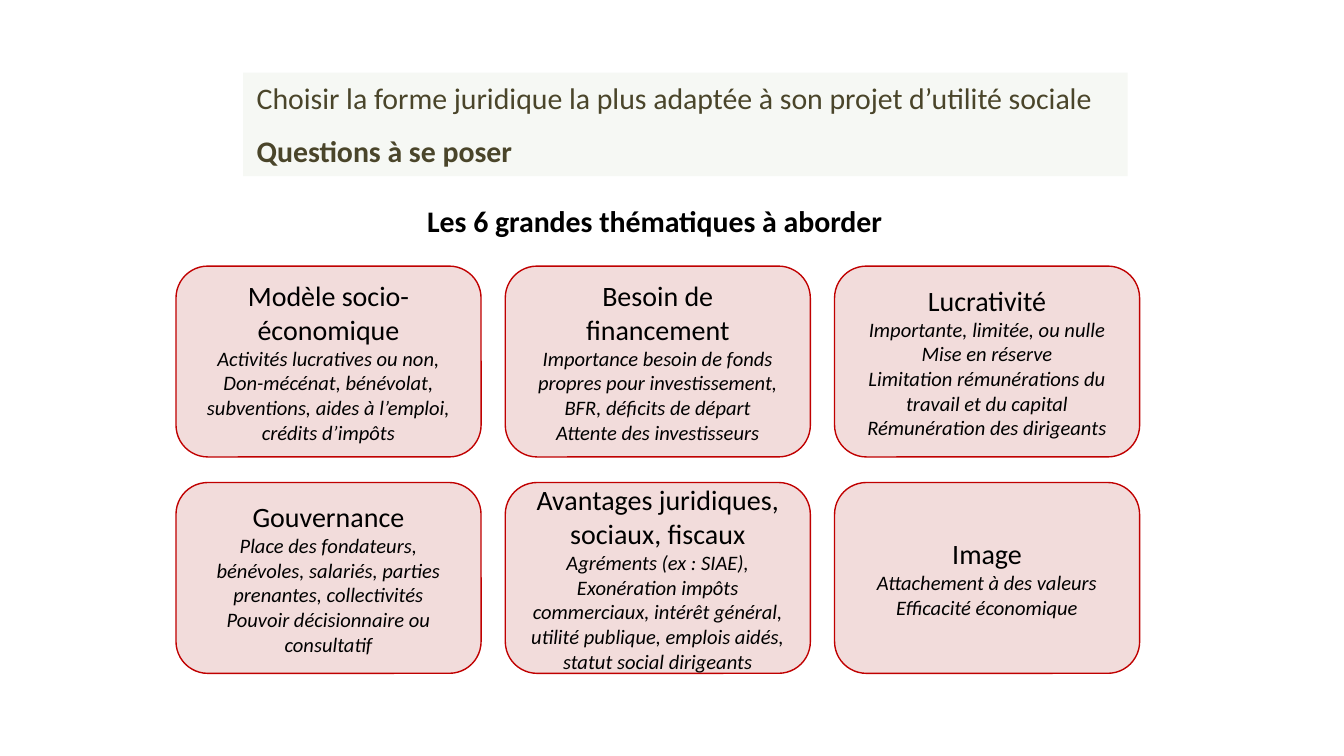
from pptx import Presentation
from pptx import util as u
from pptx.dml.color import RGBColor
from pptx.enum import shapes, text

TITLE_ONLY = 5
FONT = "Calibri"
LEFT, TOP = 1.31, 1.98
CARD_WIDTH, CARD_HEIGHT = 2.27, 1.42
COLUMN_STEP, ROW_STEP = 2.45, 1.61

THEMES = [
    [
        ("Modèle socio-économique",
         ["Activités lucratives ou non, Don-mécénat, bénévolat, subventions, "
          "aides à l’emploi, crédits d’impôts"]),
        ("Besoin de financement",
         ["Importance besoin de fonds propres pour investissement, BFR, "
          "déficits de départ",
          "Attente des investisseurs"]),
        ("Lucrativité",
         ["Importante, limitée, ou nulle",
          "Mise en réserve",
          "Limitation rémunérations du travail et du capital",
          "Rémunération des dirigeants"]),
    ],
    [
        ("Gouvernance",
         ["Place des fondateurs, bénévoles, salariés, parties prenantes, "
          "collectivités",
          "Pouvoir décisionnaire ou consultatif"]),
        ("Avantages juridiques, sociaux, fiscaux",
         ["Agréments (ex : SIAE), Exonération impôts commerciaux, intérêt "
          "général, utilité publique, emplois aidés, statut social dirigeants"]),
        ("Image",
         ["Attachement à des valeurs Efficacité économique"]),
    ],
]


def color(value):
    return RGBColor.from_string(value)


def write(frame, content, first=False, size=16, ink="000000", bold=False,
          italic=False, align=text.PP_ALIGN.LEFT, spacing=None):
    """Write one paragraph, in the frame's opening paragraph if first is set."""
    paragraph = frame.paragraphs[0] if first else frame.add_paragraph()
    paragraph.alignment = align
    paragraph.line_spacing = spacing
    run = paragraph.add_run()
    run.text = content
    run.font.name = FONT
    run.font.size = u.Pt(size)
    run.font.bold = bold
    run.font.italic = italic
    run.font.color.rgb = color(ink)


class ThemeSlide:
    """Style and current slide."""

    header_fill, header_ink = "F6F8F4", "4A452A"
    card_fill, card_line = "F2DCDB", "C00000"

    def __init__(self, presentation):
        layout = presentation.slide_layouts[TITLE_ONLY]
        self.slide = presentation.slides.add_slide(layout)

    def header(self, topic, subtitle):
        title = self.slide.shapes.title
        title.left, title.top = u.Inches(1.81), u.Inches(0.54)
        title.width, title.height = u.Inches(6.58), u.Inches(0.77)
        title.fill.solid()
        title.fill.fore_color.rgb = color(self.header_fill)
        frame = title.text_frame
        frame.auto_size = text.MSO_AUTO_SIZE.NONE
        frame.vertical_anchor = text.MSO_ANCHOR.TOP
        write(frame, topic, first=True, ink=self.header_ink)
        write(frame, subtitle, ink=self.header_ink, bold=True, spacing=1.5)

    def heading(self, content):
        box = self.slide.shapes.add_textbox(
            u.Inches(3.08), u.Inches(1.46), u.Inches(3.63), u.Inches(0.37))
        box.text_frame.word_wrap = True
        write(box.text_frame, content, first=True, bold=True)

    def card(self, column, row, name, details):
        shape = self.slide.shapes.add_shape(
            shapes.MSO_SHAPE.ROUNDED_RECTANGLE,
            u.Inches(LEFT + column * COLUMN_STEP),
            u.Inches(TOP + row * ROW_STEP),
            u.Inches(CARD_WIDTH), u.Inches(CARD_HEIGHT))
        shape.shadow.inherit = False
        shape.fill.solid()
        shape.fill.fore_color.rgb = color(self.card_fill)
        shape.line.color.rgb = color(self.card_line)
        shape.line.width = u.Pt(0.75)
        frame = shape.text_frame
        frame.word_wrap = True
        frame.vertical_anchor = text.MSO_ANCHOR.MIDDLE
        write(frame, name, first=True, size=15, align=text.PP_ALIGN.CENTER)
        for detail in details:
            write(frame, detail, size=11, italic=True,
                  align=text.PP_ALIGN.CENTER)


def main():
    presentation = Presentation()
    presentation.slide_width = u.Inches(10)
    presentation.slide_height = u.Inches(10 * 9 / 16)
    page = ThemeSlide(presentation)
    page.header("Choisir la forme juridique la plus adaptée à son projet "
                "d’utilité sociale", "Questions à se poser")
    page.heading("Les 6 grandes thématiques à aborder")
    for row, themes in enumerate(THEMES):
        for column, (name, details) in enumerate(themes):
            page.card(column, row, name, details)
    presentation.save("out.pptx")


if __name__ == "__main__":
    main()
